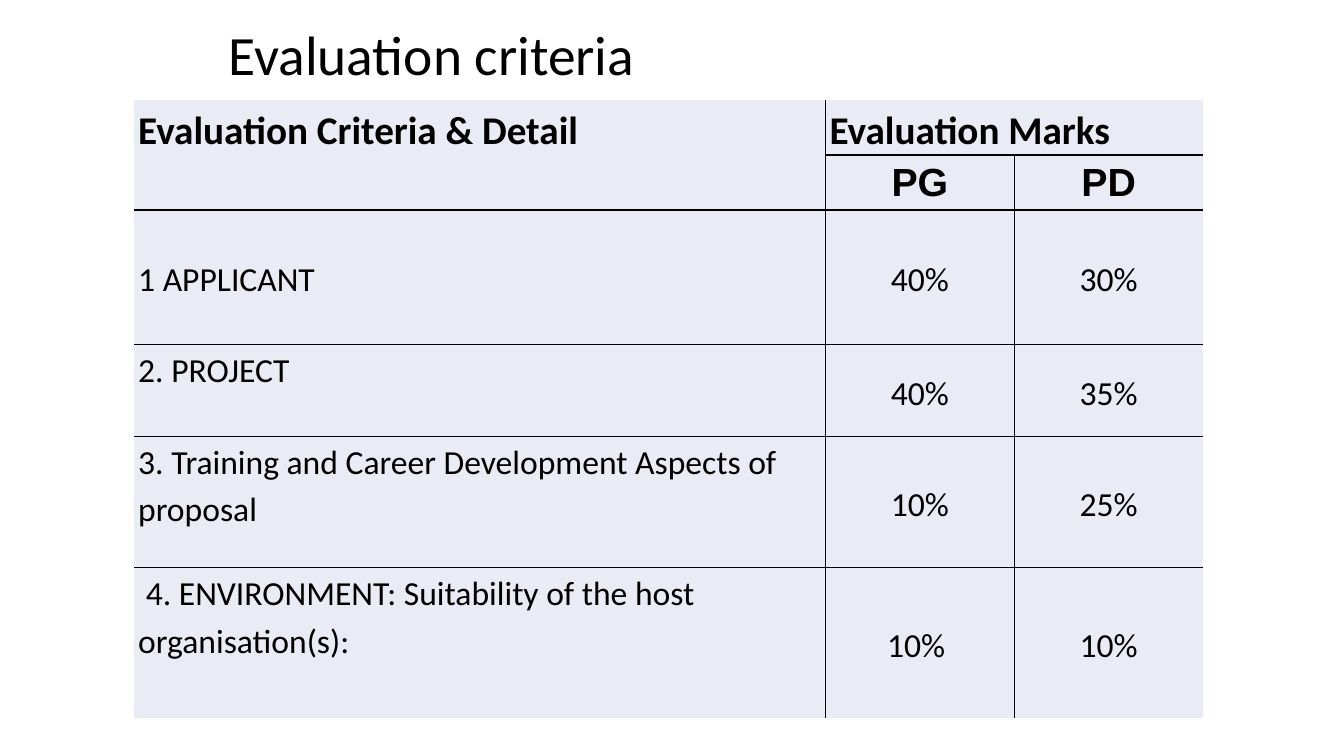
from lxml import etree
from pptx import Presentation
from pptx.dml.color import RGBColor
from pptx.enum.text import MSO_ANCHOR, PP_ALIGN
from pptx.oxml.ns import qn
from pptx.util import Pt

LEFT, CENTER = PP_ALIGN.LEFT, PP_ALIGN.CENTER
TOP, MIDDLE = MSO_ANCHOR.TOP, MSO_ANCHOR.MIDDLE
NO_GRID_STYLE = "{2D5ABB26-0587-4C30-8999-92F81FD0307C}"


class Theme:
    ink = "000000"
    cell = "E9EBF5"
    font = "Calibri"
    label_font = "Arial"
    title = 39.6
    header = 28
    body = 24


def write(tf, text, size=Theme.body, font=Theme.font, bold=False,
          align=LEFT, spacing=1.15):
    tf.word_wrap = True
    p = tf.paragraphs[0]
    p.alignment = align
    p.line_spacing = spacing
    r = p.add_run()
    r.text = text
    r.font.size = Pt(size)
    r.font.name = font
    r.font.bold = bold
    r.font.color.rgb = RGBColor.from_string(Theme.ink)


def add_borders(cell, sides):
    """Draw 1 pt lines on the given sides, in the order L, R, T, B."""
    tcPr = cell._tc.get_or_add_tcPr()
    for side in sides:
        ln = etree.SubElement(tcPr, qn(f"a:ln{side}"), w=str(Pt(1)))
        fill = etree.SubElement(ln, qn("a:solidFill"))
        etree.SubElement(fill, qn("a:srgbClr"), val=Theme.ink)


prs = Presentation()
prs.slide_width, prs.slide_height = Pt(960), Pt(540)
s = prs.slides.add_slide(prs.slide_layouts[6])

title = s.shapes.add_textbox(Pt(156.2), Pt(21.6), Pt(648), Pt(38.9))
title.text_frame.vertical_anchor = MIDDLE
write(title.text_frame, "Evaluation criteria", size=Theme.title, spacing=0.9)

col_widths = [493.9, 134.8, 134.8]
row_heights = [39.3, 39.3, 96.4, 65.7, 93.6, 107.1]
criteria = [
    ("1 APPLICANT", "40%", "30%"),
    ("2. PROJECT", "40%", "35%"),
    ("3. Training and Career Development Aspects of proposal", "10%", "25%"),
    (" 4. ENVIRONMENT: Suitability of the host organisation(s):", "10% ", "10%"),
]

frame = s.shapes.add_table(len(row_heights), len(col_widths), Pt(95.8), Pt(71.4),
                           Pt(sum(col_widths)), Pt(sum(row_heights)))
table = frame.table
table.first_row = table.horz_banding = False
table._tbl.tblPr.find(qn("a:tableStyleId")).text = NO_GRID_STYLE
for col, width in zip(table.columns, col_widths):
    col.width = Pt(width)
for row, height in zip(table.rows, row_heights):
    row.height = Pt(height)

table.cell(0, 0).merge(table.cell(1, 0))
table.cell(0, 1).merge(table.cell(0, 2))

# Lines run between cells only: none on the outer edge or inside a merged cell.
last_row, last_col = len(row_heights) - 1, len(col_widths) - 1
merged_edges = {(0, 0, "B"), (1, 0, "T"), (0, 1, "R"), (0, 2, "L")}
for i in range(last_row + 1):
    for j in range(last_col + 1):
        inner = {"L": j > 0, "R": j < last_col, "T": i > 0, "B": i < last_row}
        cell = table.cell(i, j)
        add_borders(cell, [side for side, shown in inner.items()
                           if shown and (i, j, side) not in merged_edges])
        cell.fill.solid()
        cell.fill.fore_color.rgb = RGBColor.from_string(Theme.cell)
        cell.margin_left = cell.margin_right = Pt(2.9)
        cell.margin_top = cell.margin_bottom = Pt(0)

for j, text in enumerate(["Evaluation Criteria & Detail", "Evaluation Marks"]):
    write(table.cell(0, j).text_frame, text, size=Theme.header, bold=True)
for j, text in enumerate(["PG", "PD"], start=1):
    write(table.cell(1, j).text_frame, text, size=Theme.header,
          font=Theme.label_font, bold=True, align=CENTER)

for i, values in enumerate(criteria, start=2):
    for j, text in enumerate(values):
        cell = table.cell(i, j)
        cell.vertical_anchor = MIDDLE if j or i == 2 else TOP
        write(cell.text_frame, text, align=CENTER if j else LEFT)

prs.save("out.pptx")
